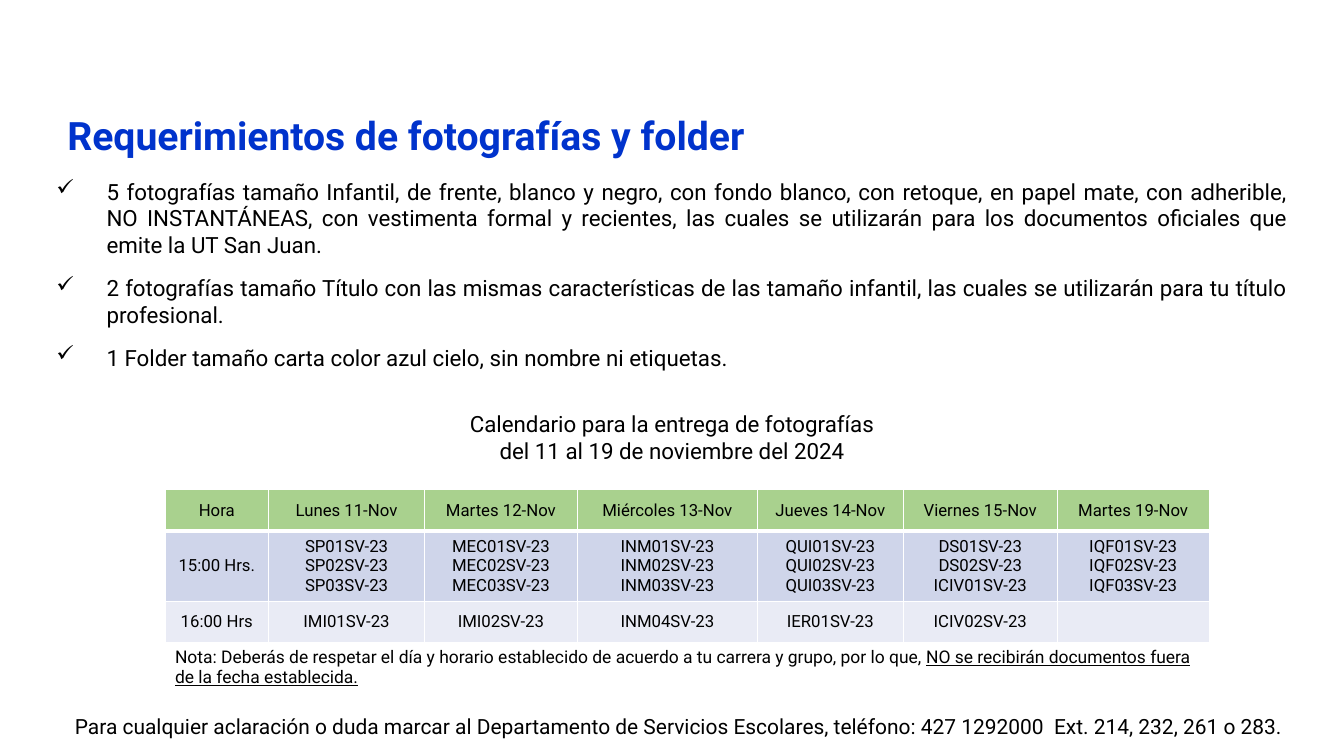
from dataclasses import dataclass, field
from typing import Any

from lxml.etree import SubElement
from pptx import Presentation
from pptx.dml.color import RGBColor
from pptx.enum.text import MSO_ANCHOR, MSO_AUTO_SIZE, PP_ALIGN
from pptx.oxml.ns import qn
from pptx.slide import Slide
from pptx.table import _Cell
from pptx.text.text import TextFrame, _Paragraph
from pptx.util import Emu, Pt

PX = 9144
FONT = "Roboto"
COLOURS = {
    "title": "0033CC",
    "text": "000000",
    "header": "A9D18E",
    "early": "CFD5EA",
    "late": "E9EBF5",
    "border": "FFFFFF",
}


@dataclass
class Span:
    text: str
    underline: bool = False


@dataclass
class Para:
    spans: list[Span]
    size: float
    align: PP_ALIGN = PP_ALIGN.CENTER
    before: float = 0
    bullet: bool = False
    bold: bool = False
    colour: str = "text"
    layout: dict[str, Any] = field(default_factory=dict)


@dataclass
class Box:
    left: int
    top: int
    width: int
    height: int

    def emu(self) -> tuple[Emu, ...]:
        return tuple(px(n) for n in (self.left, self.top, self.width, self.height))


@dataclass
class Row:
    height: int
    fill: str
    cells: list[str]
    top_border: int = 1
    bottom_border: int = 1


TITLE_BOX = Box(57, 91, 1217, 93)
BODY_BOX = Box(40, 172, 1256, 533)
CONTACT_BOX = Box(57, 705, 1236, 35)
TABLE_BOX = Box(164, 487, 1038, 203)
COLUMN_WIDTHS = [103, 155, 152, 179, 145, 153, 151]
NOTE_HEIGHT = 52

REQUIREMENTS = [
    "5 fotografías tamaño Infantil, de frente, blanco y negro, con fondo blanco, con retoque, en papel mate, con adherible, NO INSTANTÁNEAS, con vestimenta formal y recientes, las cuales se utilizarán para los documentos oficiales que emite la UT San Juan.",
    "2 fotografías tamaño Título con las mismas características de las tamaño infantil, las cuales se utilizarán para tu título profesional.",
    "1 Folder tamaño carta color azul cielo, sin nombre ni etiquetas.",
]
CALENDAR_HEADING = [
    "Calendario para la entrega de fotografías",
    "del 11 al 19 de noviembre del 2024",
]
CONTACT = "Para cualquier aclaración o duda marcar al Departamento de Servicios Escolares, teléfono: 427 1292000  Ext. 214, 232, 261 o 283."
NOTE = [
    Span("Nota: Deberás de respetar el día y horario establecido de acuerdo a tu carrera y grupo, por lo que, "),
    Span("NO se recibirán documentos fuera de la fecha establecida.", underline=True),
]
ROWS = [
    Row(41, "header", ["Hora", "Lunes 11-Nov", "Martes 12-Nov", "Miércoles 13-Nov",
                       "Jueves 14-Nov", "Viernes 15-Nov", "Martes 19-Nov"], bottom_border=3),
    Row(69, "early", ["15:00 Hrs.", "SP01SV-23\nSP02SV-23\nSP03SV-23",
                      "MEC01SV-23\nMEC02SV-23\nMEC03SV-23", "INM01SV-23\nINM02SV-23\nINM03SV-23",
                      "QUI01SV-23\nQUI02SV-23\nQUI03SV-23", "DS01SV-23\nDS02SV-23\nICIV01SV-23",
                      "IQF01SV-23\nIQF02SV-23\nIQF03SV-23"], top_border=3),
    Row(41, "late", ["16:00 Hrs", "IMI01SV-23", "IMI02SV-23", "INM04SV-23",
                     "IER01SV-23", "ICIV02SV-23", ""]),
]


def px(count: int) -> Emu:
    return Emu(count * PX)


def apply(target: Any, values: dict[str, Any]) -> None:
    for name, value in values.items():
        setattr(target, name, value)


def add_bullet(para: _Paragraph) -> None:
    properties = para._p.get_or_add_pPr()
    properties.set("marL", str(px(50)))
    properties.set("indent", str(-px(50)))
    SubElement(properties, qn("a:buChar")).set("char", "✓")


def write(frame: TextFrame, paras: list[Para]) -> None:
    for index, content in enumerate(paras):
        para = frame.add_paragraph() if index else frame.paragraphs[0]
        if content.bullet:
            add_bullet(para)
        apply(para, {"alignment": content.align, **content.layout})
        if content.before:
            para.space_before = Pt(content.before)
        for piece in content.spans:
            span = para.add_run()
            span.text = piece.text
            apply(span.font, {"name": FONT, "size": Pt(content.size),
                              "bold": content.bold, "underline": piece.underline})
            span.font.color.rgb = RGBColor.from_string(COLOURS[content.colour])


def add_title(page: Slide) -> None:
    title = page.shapes.title
    apply(title, dict(zip(("left", "top", "width", "height"), TITLE_BOX.emu())))
    apply(title.text_frame, {"auto_size": MSO_AUTO_SIZE.NONE, "word_wrap": True,
                             "vertical_anchor": MSO_ANCHOR.MIDDLE})
    write(title.text_frame, [Para([Span("Requerimientos de fotografías y folder")], 28,
                                  PP_ALIGN.LEFT, bold=True, colour="title",
                                  layout={"line_spacing": 0.9})])


def add_text(page: Slide, box: Box, paras: list[Para], margin: int = 10) -> None:
    frame = page.shapes.add_textbox(*box.emu()).text_frame
    apply(frame, {"word_wrap": True, "margin_left": px(margin), "margin_right": px(margin)})
    write(frame, paras)


def add_borders(cell: _Cell, top: int, bottom: int) -> None:
    properties = cell._tc.get_or_add_tcPr()
    for side, width in {"L": 1, "R": 1, "T": top, "B": bottom}.items():
        line = SubElement(properties, qn(f"a:ln{side}"), w=str(Pt(width)))
        fill = SubElement(line, qn("a:solidFill"))
        SubElement(fill, qn("a:srgbClr"), val=COLOURS["border"])


def add_calendar(page: Slide) -> None:
    table = page.shapes.add_table(len(ROWS) + 1, len(COLUMN_WIDTHS), *TABLE_BOX.emu()).table
    for column, width in zip(table.columns, COLUMN_WIDTHS):
        column.width = px(width)
    for index, row in enumerate(ROWS):
        table.rows[index].height = px(row.height)
        for cell, text in zip(table.rows[index].cells, row.cells):
            add_borders(cell, row.top_border, row.bottom_border)
            cell.fill.solid()
            cell.fill.fore_color.rgb = RGBColor.from_string(COLOURS[row.fill])
            cell.vertical_anchor = MSO_ANCHOR.MIDDLE
            if text:
                write(cell.text_frame, [Para([Span(line)], 12) for line in text.split("\n")])
    table.rows[len(ROWS)].height = px(NOTE_HEIGHT)
    for cell in table.rows[len(ROWS)].cells:
        add_borders(cell, 1, 1)
        cell.fill.background()
    note = table.cell(len(ROWS), 0)
    note.merge(table.cell(len(ROWS), len(COLUMN_WIDTHS) - 1))
    write(note.text_frame, [Para(NOTE, 12.5, PP_ALIGN.LEFT)])


def main() -> None:
    deck = Presentation()
    apply(deck, {"slide_width": px(1336), "slide_height": px(750)})
    page = deck.slides.add_slide(deck.slide_layouts.get_by_name("Title Only"))
    add_title(page)
    requirements = [Para([Span(text)], 16, PP_ALIGN.JUSTIFY, 11.6 if index else 0, bullet=True)
                    for index, text in enumerate(REQUIREMENTS)]
    heading = [Para([Span(text)], 16, before=0 if index else 28)
               for index, text in enumerate(CALENDAR_HEADING)]
    add_text(page, BODY_BOX, requirements + heading, margin=16)
    add_calendar(page)
    add_text(page, CONTACT_BOX, [Para([Span(CONTACT)], 15)])
    deck.save("out.pptx")


if __name__ == "__main__":
    main()
